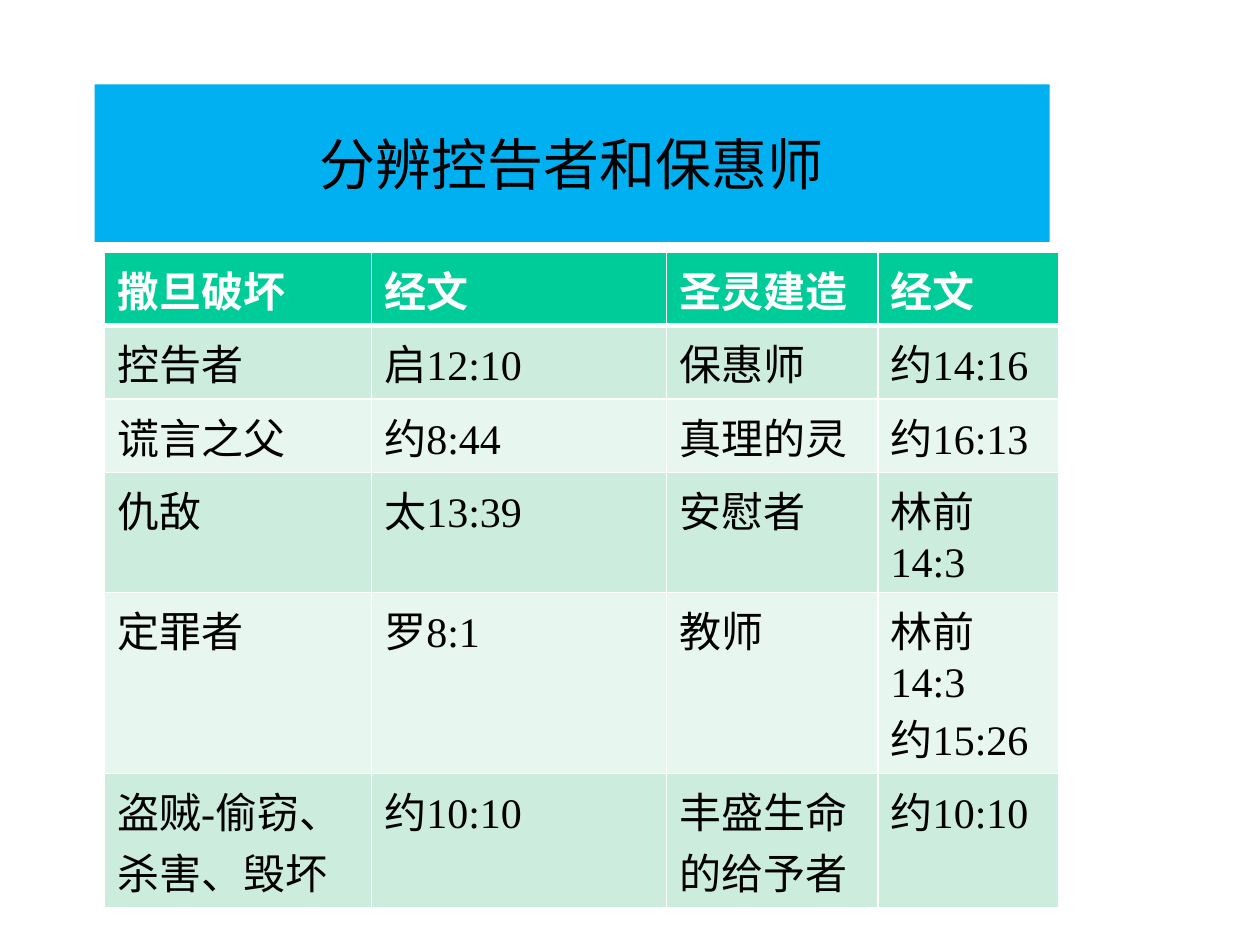
from dataclasses import dataclass

from lxml import etree
from pptx import Presentation
from pptx.dml.color import RGBColor
from pptx.enum import shapes, text
from pptx.oxml import ns
from pptx.util import Inches, Pt


@dataclass(frozen=True)
class Theme:
    font: str = "Times New Roman"
    ink: str = "000000"
    white: str = "FFFFFF"
    title: str = "00B0F0"
    head: str = "00CC99"
    bands: tuple = ("CCECDE", "E7F6EF")
    title_size: int = 32
    cell_size: int = 24
    thin: int = 1
    thick: int = 3


@dataclass(frozen=True)
class Box:
    left: float
    top: float
    width: float
    height: float

    def emu(self) -> tuple:
        return tuple(Inches(v) for v in (self.left, self.top, self.width, self.height))


THEME = Theme()
TITLE = "分辨控告者和保惠师"
COLS = (2.12, 2.34, 1.68, 1.43)
HIGH = (0.5, 0.42, 0.42, 0.5, 0.42, 0.42)
ROWS = (
    ("撒旦破坏", "经文", "圣灵建造", "经文"),
    ("控告者", "启12:10", "保惠师", "约14:16"),
    ("谎言之父", "约8:44", "真理的灵", "约16:13"),
    ("仇敌", "太13:39", "安慰者", "林前14:3"),
    ("定罪者", "罗8:1", "教师", "林前14:3\n约15:26"),
    ("盗贼-偷窃、杀害、毁坏", "约10:10", "丰盛生命的给予者", "约10:10"),
)


def style(frame, size: int, color: str, bold: bool = False) -> None:
    for para in frame.paragraphs:
        for run in para.runs:
            font = run.font
            font.name, font.size, font.bold = THEME.font, Pt(size), bold
            font.color.rgb = RGBColor.from_string(color)


def paint(item, color: str) -> None:
    item.fill.solid()
    item.fill.fore_color.rgb = RGBColor.from_string(color)


def edge(cell, side: str, width: int) -> None:
    props = cell._tc.get_or_add_tcPr()
    line = etree.SubElement(props, ns.qn(f"a:ln{side}"), w=str(Pt(width)))
    fill = etree.SubElement(line, ns.qn("a:solidFill"))
    etree.SubElement(fill, ns.qn("a:srgbClr"), val=THEME.white)


def draw_title(slide, box: Box) -> None:
    shape = slide.shapes.add_shape(shapes.MSO_SHAPE.RECTANGLE, *box.emu())
    shape.shadow.inherit = False
    shape.line.fill.background()
    paint(shape, THEME.title)
    frame = shape.text_frame
    frame.text = TITLE
    frame.word_wrap = True
    frame.vertical_anchor = text.MSO_ANCHOR.MIDDLE
    frame.paragraphs[0].alignment = text.PP_ALIGN.CENTER
    style(frame, THEME.title_size, THEME.ink)


def draw_cell(cell, words: str, row: int) -> None:
    head = row == 0
    cell.text_frame.text = words
    style(cell.text_frame, THEME.cell_size, THEME.white if head else THEME.ink, head)
    # Borders come before the fill in the cell properties
    for side in "LRTB":
        heavy = (head and side == "B") or (row == 1 and side == "T")
        edge(cell, side, THEME.thick if heavy else THEME.thin)
    paint(cell, THEME.head if head else THEME.bands[(row - 1) % 2])


def draw_table(slide, box: Box) -> None:
    grid = slide.shapes.add_table(len(ROWS), len(COLS), *box.emu()).table
    for col, width in zip(grid.columns, COLS):
        col.width = Inches(width)
    for row, height in zip(grid.rows, HIGH):
        row.height = Inches(height)
    for r, row in enumerate(ROWS):
        for c, words in enumerate(row):
            draw_cell(grid.cell(r, c), words, r)


def main() -> None:
    deck = Presentation()
    deck.slide_width, deck.slide_height = Inches(10), Inches(7.5)
    slide = deck.slides.add_slide(deck.slide_layouts[6])
    # Title band above the comparison table
    draw_title(slide, Box(0.75, 0.67, 7.58, 1.25))
    draw_table(slide, Box(0.83, 2, sum(COLS), sum(HIGH)))
    deck.save("out.pptx")


if __name__ == "__main__":
    main()
